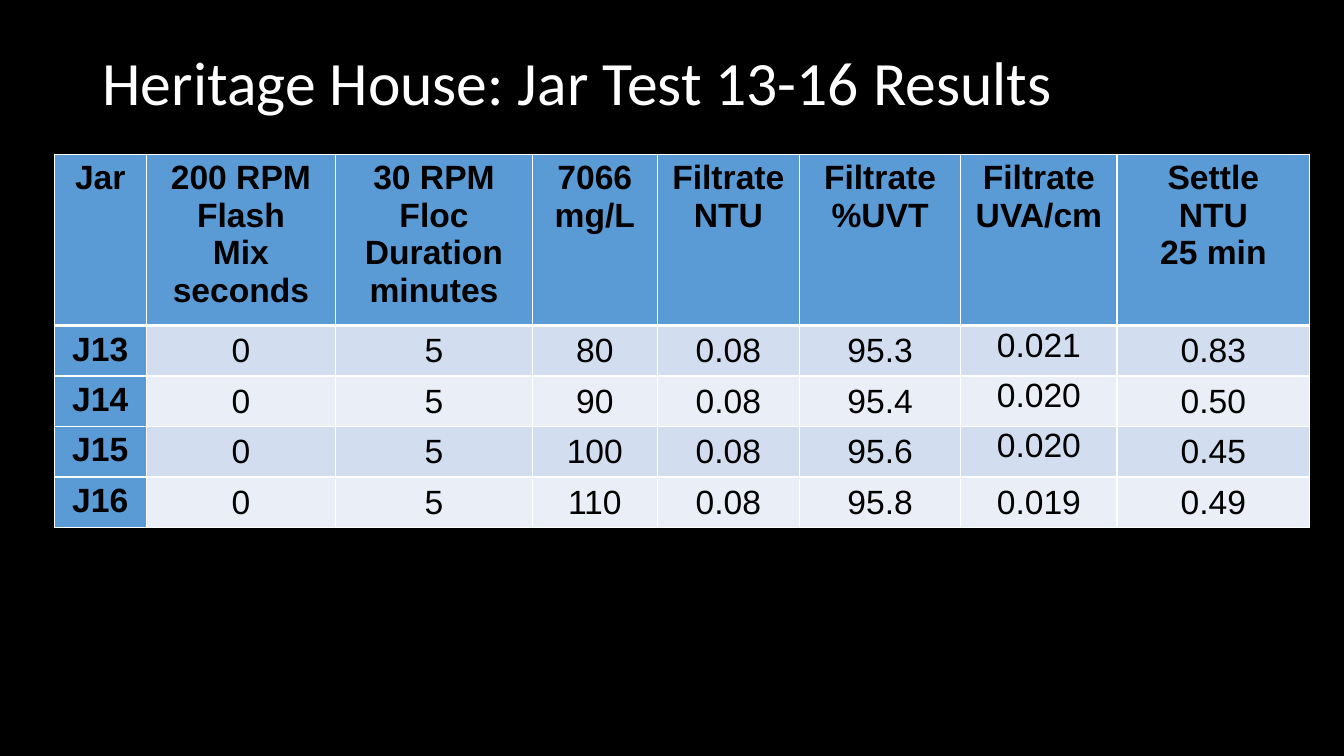
from dataclasses import dataclass

from lxml import etree
from pptx import Presentation
from pptx import util as u
from pptx.dml.color import RGBColor
from pptx.enum import text
from pptx.oxml.ns import qn


@dataclass(frozen=True)
class Theme:
    background: str = "000000"
    title_color: str = "FFFFFF"
    cell_text: str = "000000"
    heading_fill: str = "5B9BD5"
    bands: tuple = ("D2DEEF", "EAEFF7")
    border: str = "FFFFFF"
    thin: float = 1
    thick: float = 3
    title_font: str = "Calibri"
    table_font: str = "Arial"
    title_size: float = 44
    table_size: float = 24


THEME = Theme()
WIDTH, HEIGHT = u.Inches(13.33), u.Inches(7.5)

# Column widths as weights of the table's width
COLUMN_WEIGHTS = (91, 188, 195, 124, 141, 160, 155, 191)
HEADER_SHARE, ROW_SHARE = 0.2125, 0.063
UVA_COLUMN = 6

HEADINGS = (
    ("Jar",),
    ("200 RPM", "Flash", "Mix", "seconds"),
    ("30 RPM Floc", "Duration", "minutes"),
    ("7066", "mg/L"),
    ("Filtrate", "NTU"),
    ("Filtrate", "%UVT"),
    ("Filtrate", "UVA/cm"),
    ("Settle", "NTU", "25 min"),
)
RESULTS = (
    ("J13", "0", "5", "80", "0.08", "95.3", "0.021", "0.83"),
    ("J14", "0", "5", "90", "0.08", "95.4", "0.020", "0.50"),
    ("J15", "0", "5", "100", "0.08", "95.6", "0.020", "0.45"),
    ("J16", "0", "5", "110", "0.08", "95.8", "0.019", "0.49"),
)


def across(share):
    return round(WIDTH * share)


def down(share):
    return round(HEIGHT * share)


def add_run(paragraph, words, font, size, color, bold=False):
    run = paragraph.add_run()
    run.text = words
    run.font.name = font
    run.font.size = u.Pt(size)
    run.font.bold = bold
    run.font.color.rgb = RGBColor.from_string(color)


def add_title(slide, words):
    box = slide.shapes.add_textbox(across(0.069), down(0.017), across(0.863), down(0.193))
    frame = box.text_frame
    frame.word_wrap = True
    frame.vertical_anchor = text.MSO_ANCHOR.MIDDLE
    paragraph = frame.paragraphs[0]
    paragraph.line_spacing = 0.9
    add_run(paragraph, words, THEME.title_font, THEME.title_size, THEME.title_color)


def set_borders(cell, top, bottom):
    properties = cell._tc.get_or_add_tcPr()
    widths = {"lnL": THEME.thin, "lnR": THEME.thin, "lnT": top, "lnB": bottom}
    for side, width in widths.items():
        line = etree.SubElement(properties, qn("a:" + side), w=str(u.Pt(width)))
        fill = etree.SubElement(line, qn("a:solidFill"))
        etree.SubElement(fill, qn("a:srgbClr"), val=THEME.border)


def fill_cell(cell, lines, fill, bold):
    cell.fill.solid()
    cell.fill.fore_color.rgb = RGBColor.from_string(fill)
    frame = cell.text_frame
    for index, words in enumerate(lines):
        paragraph = frame.add_paragraph() if index else frame.paragraphs[0]
        paragraph.alignment = text.PP_ALIGN.CENTER
        add_run(paragraph, words, THEME.table_font, THEME.table_size, THEME.cell_text, bold)


def tighten(cell, anchor):
    cell.margin_left = cell.margin_top = cell.margin_right = u.Inches(0.01)
    cell.margin_bottom = 0
    cell.vertical_anchor = anchor


def add_results_table(slide):
    rows = [HEADINGS] + [[(value,) for value in result] for result in RESULTS]
    width = across(0.934)
    height = down(HEADER_SHARE + ROW_SHARE * len(RESULTS))
    table = slide.shapes.add_table(
        len(rows), len(HEADINGS), across(0.0405), down(0.204), width, height).table

    # Grid
    for column, weight in zip(table.columns, COLUMN_WEIGHTS):
        column.width = round(width * weight / sum(COLUMN_WEIGHTS))
    for index, row in enumerate(table.rows):
        row.height = down(ROW_SHARE if index else HEADER_SHARE)

    # Cells: headings along the top and left, banded values elsewhere
    for r, row in enumerate(rows):
        for c, lines in enumerate(row):
            cell = table.cell(r, c)
            is_heading = r == 0 or c == 0
            set_borders(cell, THEME.thick if r == 1 else THEME.thin,
                        THEME.thick if r == 0 else THEME.thin)
            fill = THEME.heading_fill if is_heading else THEME.bands[(r - 1) % 2]
            fill_cell(cell, lines, fill, is_heading)
            if not is_heading:
                at_top = c == UVA_COLUMN and r < len(RESULTS)
                tighten(cell, text.MSO_ANCHOR.TOP if at_top else text.MSO_ANCHOR.MIDDLE)


def main():
    presentation = Presentation()
    presentation.slide_width, presentation.slide_height = WIDTH, HEIGHT
    slide = presentation.slides.add_slide(presentation.slide_layouts[6])
    slide.background.fill.solid()
    slide.background.fill.fore_color.rgb = RGBColor.from_string(THEME.background)
    add_title(slide, "Heritage House: Jar Test 13-16 Results")
    add_results_table(slide)
    presentation.save("out.pptx")


if __name__ == "__main__":
    main()
